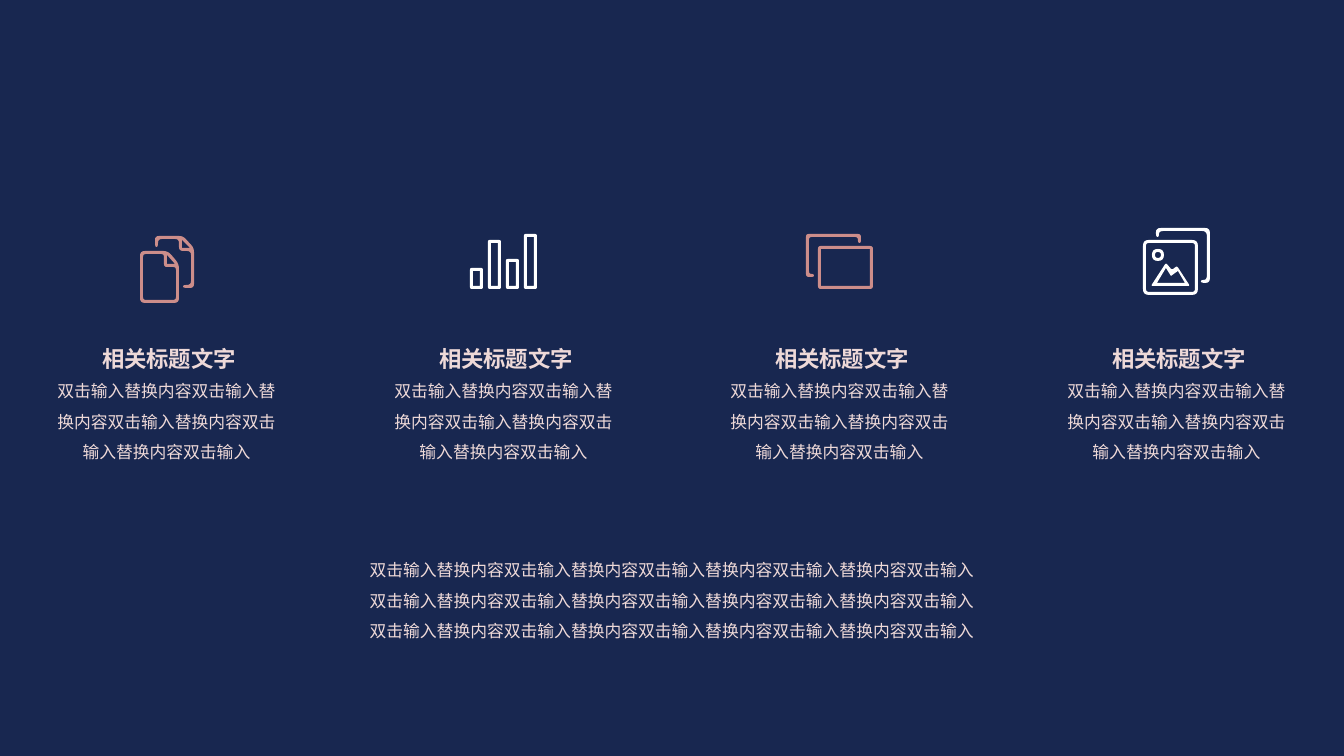
from lxml import etree
from pptx import Presentation
from pptx import util as u
from pptx.dml.color import RGBColor
from pptx.enum import text
from pptx.oxml.ns import qn

W, H = 1344, 756
SCALE = u.Inches(1) / 100.8
FONT = "Noto Sans CJK SC"
COLORS = {"navy": "182750", "blush": "EED9D8", "rose": "CC8D8A", "white": "FFFFFF"}
STROKE = 3
TITLE = "相关标题文字"
BODY = "双击输入替换内容双击输入替换内容双击输入替换内容双击输入替换内容双击输入"


def px(n):
    return u.Emu(round(n * SCALE))


def rgb(name):
    return RGBColor.from_string(COLORS[name])


# Icon outlines: each contour is a closed list of points and a corner radius
def round_corners(points, radius):
    """Replace each corner by a short sampled curve, up to half an edge long."""
    if not radius:
        return points
    out = []
    for i, (x, y) in enumerate(points):
        ends = []
        for nx, ny in (points[i - 1], points[(i + 1) % len(points)]):
            k = min(radius / ((nx - x) ** 2 + (ny - y) ** 2) ** 0.5, 0.5)
            ends.append((x + (nx - x) * k, y + (ny - y) * k))
        (ax, ay), (bx, by) = ends
        for t in (0, 0.25, 0.5, 0.75, 1):
            a, b, c = (1 - t) ** 2, 2 * t * (1 - t), t * t
            out.append((a * ax + b * x + c * bx, a * ay + b * y + c * by))
    return out


def rect(x, y, right, bottom, radius):
    return [(x, y), (right, y), (right, bottom), (x, bottom)], radius


def frame(x, y, right, bottom, radius):
    s = STROKE
    return [rect(x, y, right, bottom, radius),
            rect(x + s, y + s, right - s, bottom - s, max(radius - s, 0))]


def pages_icon():
    return [
        ([(22, 19), (22, 8), (50, 8), (61, 20), (61, 60), (50, 60), (50, 57),
          (58, 57), (58, 23), (46, 23), (46, 11), (25, 11), (25, 19)], 4),
        ([(49, 12), (49, 20), (57, 20)], 0),
        ([(7, 23), (35, 23), (46, 36), (46, 75), (7, 75)], 5),
        ([(10, 26), (31, 26), (31, 39), (43, 39), (43, 72), (10, 72)], 3),
        ([(34, 27), (34, 36), (42, 36)], 0),
    ]


def bars_icon():
    bars = []
    for i, top in enumerate((40, 12, 31, 6)):
        bars += frame(18 * i, top, 18 * i + 13, 61, 2)
    return bars


def windows_icon():
    hook = [(8, 49), (0, 49), (0, 6), (55, 6), (55, 15), (52, 15),
            (52, 9), (3, 9), (3, 46), (8, 46)]
    return [(hook, 3)] + frame(12, 18, 67, 61, 3)


def gallery_icon():
    hook = [(13, 9), (13, 0), (67, 0), (67, 55), (58, 55), (58, 52),
            (64, 52), (64, 3), (16, 3), (16, 9)]
    hill = [(8, 58), (23, 35), (29, 42), (34, 38), (47, 58)]
    hill_hole = [(14, 55), (23, 40), (28, 48), (35, 43), (42, 55)]
    return ([(hook, 5), (hill, 2), (hill_hole, 0)]
            + frame(0, 12, 55, 67, 6)
            + [rect(9, 21, 21, 33, 6), rect(12, 24, 18, 30, 3)])


def add_icon(slide, box, contours, color):
    left, top = box
    builder = None
    for points, radius in contours:
        emu = [(px(left + x), px(top + y)) for x, y in round_corners(points, radius)]
        if builder is None:
            builder = slide.shapes.build_freeform(*emu[0], scale=1.0)
        else:
            builder.move_to(*emu[0])
        builder.add_line_segments(emu[1:], close=True)
    sp = builder.convert_to_shape()
    sp.shadow.inherit = False
    sp.fill.solid()
    sp.fill.fore_color.rgb = rgb(color)
    sp.line.fill.background()


# Text
def add_text(slide, box, lines, size, spacing, align, bold=False, wrap=True):
    tf = slide.shapes.add_textbox(*map(px, box)).text_frame
    tf.word_wrap = wrap
    tf.auto_size = text.MSO_AUTO_SIZE.SHAPE_TO_FIT_TEXT
    for i, line in enumerate(lines):
        p = tf.add_paragraph() if i else tf.paragraphs[0]
        p.alignment = align
        p.line_spacing = spacing
        r = p.add_run()
        r.text = line
        r.font.name = FONT
        r.font.size = u.Pt(size)
        r.font.bold = bold
        r.font.color.rgb = rgb("blush")
        etree.SubElement(r.font._element, qn("a:ea")).set("typeface", FONT)


def add_column(slide, box, contours, color):
    x, y, w, h = box
    add_icon(slide, (x + 90, y), contours, color)
    add_text(slide, (x + 44, y + 104, 159, 45), [TITLE], 16, 1.3,
             text.PP_ALIGN.RIGHT, bold=True, wrap=False)
    add_text(slide, (x, y + 138, w, h - 138), [BODY], 12, 1.5, text.PP_ALIGN.CENTER)


def add_summary(slide, box):
    add_text(slide, box, [BODY] * 3, 12, 1.5, text.PP_ALIGN.CENTER)


def main():
    prs = Presentation()
    prs.slide_width, prs.slide_height = px(W), px(H)
    slide = prs.slides.add_slide(prs.slide_layouts[6])
    slide.background.fill.solid()
    slide.background.fill.fore_color.rgb = rgb("navy")

    # Four columns: left edge, icon, icon colour
    columns = ((43, pages_icon(), "rose"), (380, bars_icon(), "white"),
               (716, windows_icon(), "rose"), (1053, gallery_icon(), "white"))
    for left, contours, color in columns:
        add_column(slide, (left, 228, 247, 240), contours, color)

    add_summary(slide, (180, 545, 984, 102))
    prs.save("out.pptx")


if __name__ == "__main__":
    main()
